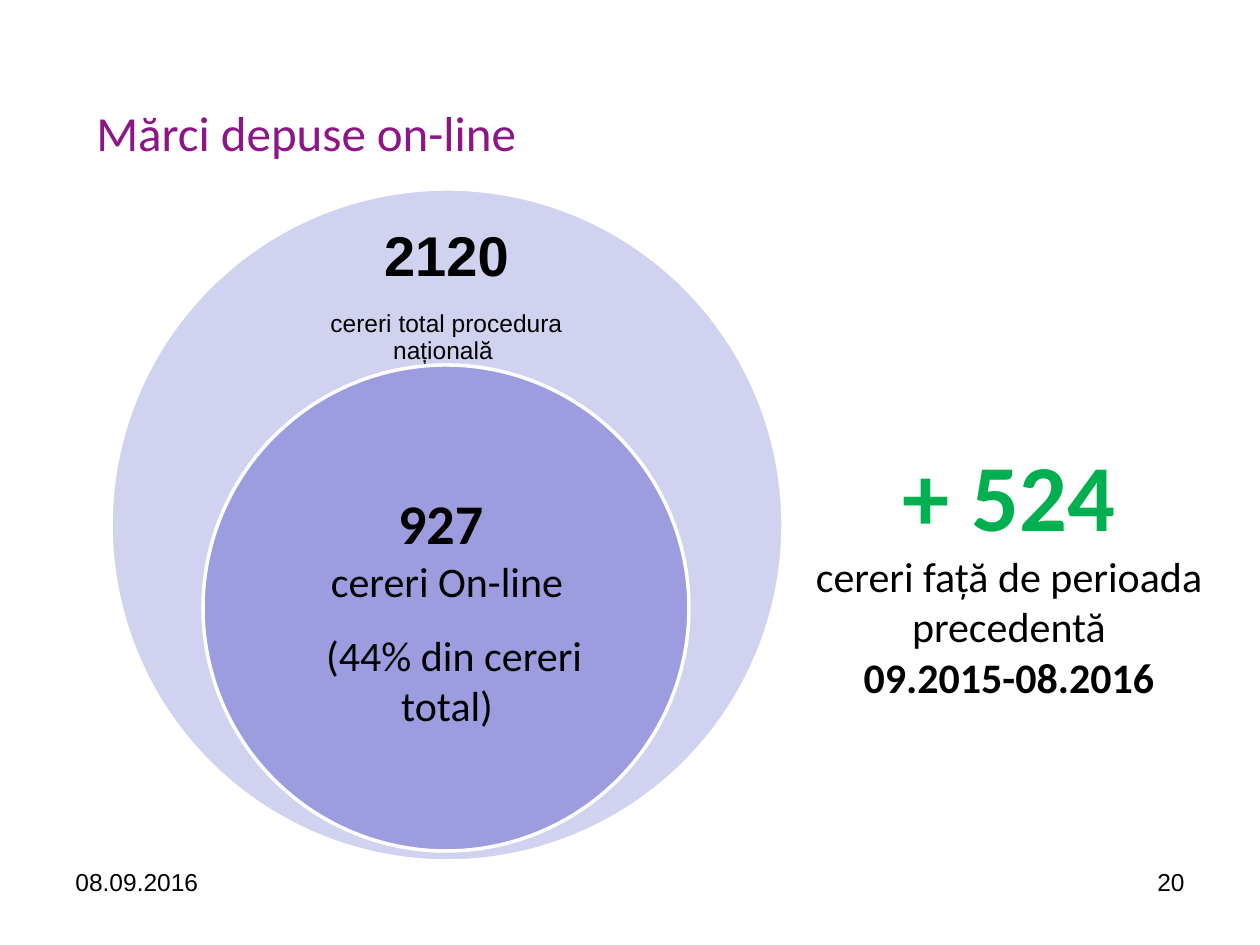
from pptx import Presentation
from pptx.dml.color import RGBColor
from pptx.enum.shapes import MSO_SHAPE
from pptx.enum.text import MSO_ANCHOR, PP_ALIGN
from pptx.util import Emu, Pt

ELLIPSE = MSO_SHAPE.OVAL
TOP, MIDDLE = MSO_ANCHOR.TOP, MSO_ANCHOR.MIDDLE
LEFT, CENTER, RIGHT = PP_ALIGN.LEFT, PP_ALIGN.CENTER, PP_ALIGN.RIGHT
EMU_PER_PX = 914400 / 126
BLACK, WHITE, PURPLE, GREEN = "000000", "FFFFFF", "8C1686", "00B050"
LAVENDER, VIOLET = "D1D1F0", "9C9CDF"
LABEL_INSET = 32


def px(length):
    return Emu(round(length * EMU_PER_PX))


def color(hex_value):
    return RGBColor.from_string(hex_value)


def add_circle(slide, left, top, diameter, fill):
    shape = slide.shapes.add_shape(
        ELLIPSE, px(left), px(top), px(diameter), px(diameter))
    shape.shadow.inherit = False
    shape.fill.solid()
    shape.fill.fore_color.rgb = color(fill)
    shape.line.color.rgb = color(WHITE)
    shape.line.width = Pt(2)


def add_text_box(slide, left, top, width, height, anchor=TOP, inset=None):
    box = slide.shapes.add_textbox(px(left), px(top), px(width), px(height))
    text_frame = box.text_frame
    text_frame.word_wrap = True
    text_frame.vertical_anchor = anchor
    if inset is not None:
        text_frame.margin_left = text_frame.margin_right = px(inset)
        text_frame.margin_top = text_frame.margin_bottom = px(inset)
    return text_frame


def format_run(run, size, font, hex_value, bold):
    run.font.size = Pt(size)
    run.font.name = font
    run.font.bold = bold
    run.font.color.rgb = color(hex_value)


def write_line(paragraph, text, size, font="Calibri", hex_value=BLACK,
               bold=False, align=CENTER, spacing=None, after=0):
    paragraph.text = text
    paragraph.alignment = align
    paragraph.line_spacing = spacing
    paragraph.space_after = Pt(after)
    format_run(paragraph.runs[0], size, font, hex_value, bold)


def add_heading_and_footer(slide):
    title = add_text_box(slide, 84, 53, 1029, 158, MIDDLE)
    write_line(title.paragraphs[0], "Mărci depuse on-line", 28,
               hex_value=PURPLE, align=LEFT)
    for left, text, align in ((63, "08.09.2016", LEFT), (903, "20", RIGHT)):
        footer = add_text_box(slide, left, 861, 294, 66)
        write_line(footer.paragraphs[0], text, 14, "Arial", align=align)


def add_total_label(slide):
    label = add_text_box(slide, 270, 239, 353, 115, MIDDLE, LABEL_INSET)
    write_line(label.paragraphs[0], "2120", 32, "Arial", bold=True,
               spacing=0.9, after=13)
    write_line(label.add_paragraph(), "cereri total procedura națională ", 14,
               "Arial", spacing=0.9)


def add_online_label(slide):
    label = add_text_box(slide, 275, 488, 344, 243, MIDDLE, LABEL_INSET)
    write_line(label.paragraphs[0], "927 ", 32, bold=True)
    write_line(label.add_paragraph(), "cereri On-line", 24, after=6)
    share = label.add_paragraph()
    write_line(share, " ", 36, spacing=0.9)
    run = share.add_run()
    run.text = "(44% din cereri total)"
    format_run(run, 24, "Calibri", BLACK, False)


def add_growth_note(slide):
    note = add_text_box(slide, 798, 431, 422, 382)
    write_line(note.paragraphs[0], "+ 524", 54, hex_value=GREEN, bold=True)
    write_line(note.add_paragraph(), "cereri față de perioada precedentă", 24)
    write_line(note.add_paragraph(), "09.2015-08.2016", 24, bold=True)


def main():
    presentation = Presentation()
    presentation.slide_width = px(1260)
    presentation.slide_height = px(945)
    slide = presentation.slides.add_slide(presentation.slide_layouts[6])
    add_heading_and_footer(slide)
    add_growth_note(slide)
    add_circle(slide, 111, 189, 672, LAVENDER)
    add_total_label(slide)
    add_circle(slide, 203, 365, 486, VIOLET)
    add_online_label(slide)
    presentation.save("out.pptx")


if __name__ == "__main__":
    main()
